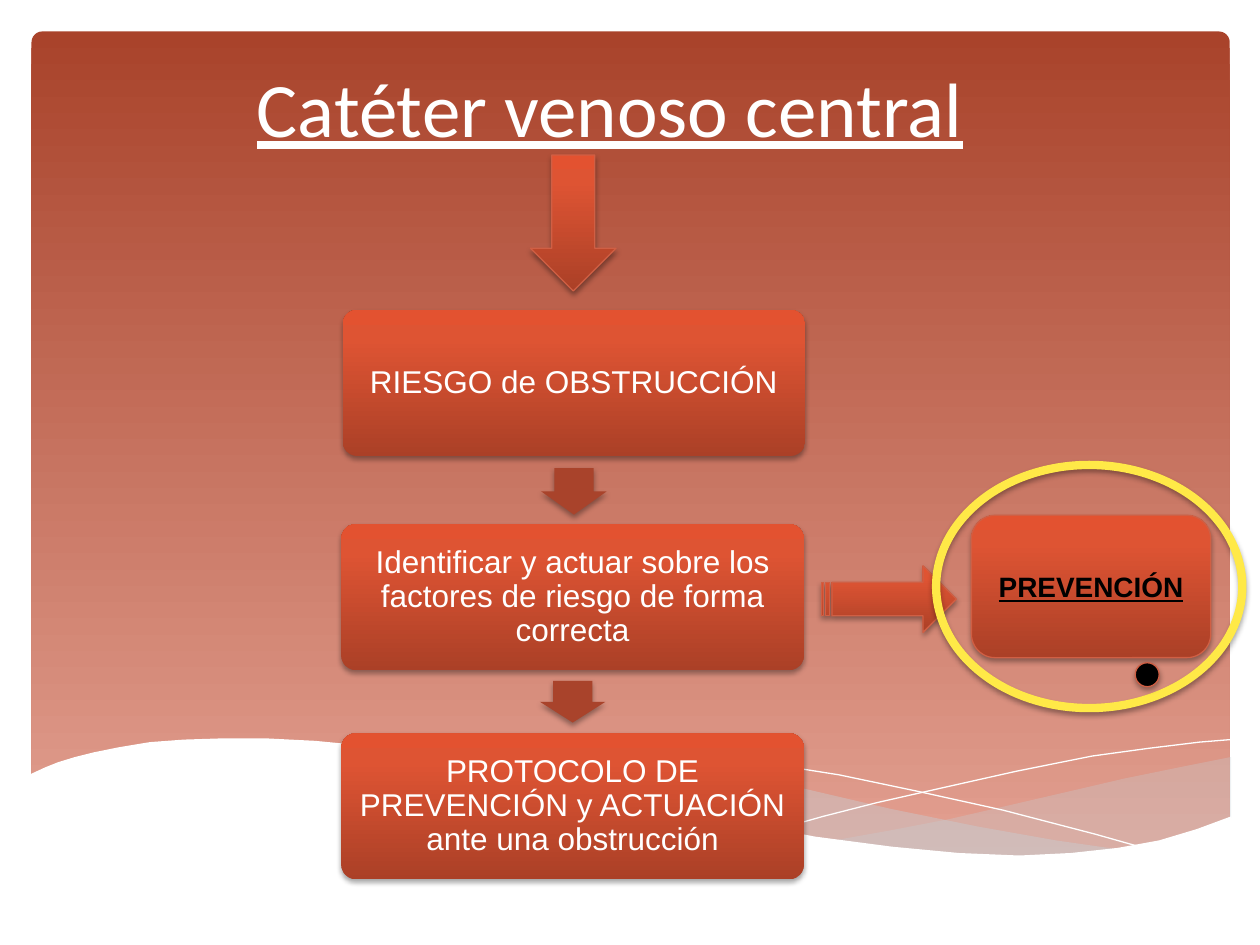
from pptx import Presentation
from pptx.dml.color import RGBColor
from pptx.enum.shapes import MSO_SHAPE as Kind
from pptx.enum.text import MSO_ANCHOR as Anchor, PP_ALIGN as Align
from pptx.oxml.ns import qn
from pptx.util import Pt
from lxml.etree import SubElement as Sub

PX = 9144
WHITE = RGBColor(0xFF, 0xFF, 0xFF)
BLACK = RGBColor(0x00, 0x00, 0x00)
RUST = RGBColor(0xA9, 0x43, 0x2B)
PINK = RGBColor(0xE3, 0xA1, 0x92)
GREY = RGBColor(0xC5, 0xD1, 0xD7)
EDGE = RGBColor(0xD0, 0x5F, 0x44)
GOLD = RGBColor(0xFF, 0xE9, 0x47)
DARK = RGBColor(0xAB, 0x40, 0x27)
WARM = RGBColor(0xDE, 0x54, 0x33)
LIT = RGBColor(0xE3, 0x52, 0x30)
GLOW = [(0, DARK), (80, WARM), (100, LIT)]
FADE = [(0, RUST), (100, PINK)]

FOLD = [(976, 601), (936, 609), (892, 618), (862, 625), (806, 638), (754, 650),
        (707, 659), (662, 667), (706, 673), (745, 677), (782, 679), (815, 680),
        (855, 678), (890, 674), (922, 667), (951, 659), (977, 649), (977, 601)]
BAND = [(894, 675), (838, 667), (776, 656), (707, 642), (630, 624), (584, 613),
        (542, 605), (502, 598), (465, 593), (420, 589), (380, 588), (345, 588),
        (314, 590), (287, 593), (323, 598), (363, 605), (405, 613), (450, 624),
        (530, 642), (602, 657), (651, 666), (696, 672), (737, 677), (774, 679),
        (808, 680), (849, 679), (877, 677)]
FALL = [(310, 597), (329, 594), (353, 591), (388, 589), (433, 589), (469, 590),
        (511, 594), (557, 598), (609, 606), (666, 615), (728, 628), (796, 643),
        (869, 662), (908, 673)]
RISE = [(614, 659), (653, 648), (696, 637), (749, 625), (807, 612), (867, 600),
        (911, 594), (952, 589), (976, 587)]
WAVE = [(977, 648), (950, 658), (920, 667), (887, 673), (850, 677), (809, 679),
        (761, 677), (708, 672), (647, 664), (579, 651), (503, 635), (447, 622),
        (391, 609), (339, 599), (292, 592), (250, 588), (211, 586), (177, 586),
        (146, 587), (119, 589), (95, 593), (75, 597), (59, 601), (46, 605),
        (36, 609), (23, 615), (23, 731), (977, 731)]


class Deck:
    """Holds the slide and the style of its shapes."""

    def __init__(self):
        self.prs = Presentation()
        self.prs.slide_width, self.prs.slide_height = 1000 * PX, 750 * PX
        self.slide = self.prs.slides.add_slide(self.prs.slide_layouts[5])
        self.shapes = self.slide.shapes

    def paint(self, item, fill=None, edge=None, width=0.75, turn=90):
        item.shadow.inherit = False
        if fill is None:
            item.fill.background()
        elif isinstance(fill, list):
            item.fill.gradient()
            item.fill.gradient_angle = turn
            stops = item._element.spPr.find(qn("a:gradFill")).find(qn("a:gsLst"))
            for old in list(stops):
                stops.remove(old)
            for pos, tone in fill:
                stop = Sub(stops, qn("a:gs"), pos=str(pos * 1000))
                Sub(stop, qn("a:srgbClr"), val=str(tone))
        else:
            item.fill.solid()
            item.fill.fore_color.rgb = fill
        if edge is None:
            item.line.fill.background()
        else:
            item.line.color.rgb = edge
            item.line.width = Pt(width)

    def shade(self, item):
        effect = item._element.spPr.find(qn("a:effectLst"))
        drop = Sub(effect, qn("a:outerShdw"), blurRad=str(int(Pt(3.1))),
                   dist=str(int(Pt(1.8))), dir="5400000", rotWithShape="0")
        tone = Sub(drop, qn("a:srgbClr"), val=str(BLACK))
        Sub(tone, qn("a:alpha"), val="35000")

    def shape(self, kind, box, fill=GLOW, edge=None, width=0.75, adj=(),
              turn=90, spin=0, shadow=True):
        item = self.shapes.add_shape(kind, *(n * PX for n in box))
        for i, value in enumerate(adj):
            item.adjustments[i] = value
        item.rotation = spin
        self.paint(item, fill, edge, width, turn)
        if shadow:
            self.shade(item)
        return item

    def curve(self, dots, fill=None, edge=None, alpha=100):
        pen = self.shapes.build_freeform(*dots[0], scale=PX)
        pen.add_line_segments(dots[1:], close=fill is not None)
        item = pen.convert_to_shape()
        self.paint(item, fill, edge, 0)
        if alpha < 100:
            tone = item._element.spPr.find(qn("a:solidFill"))[0]
            Sub(tone, qn("a:alpha"), val=str(alpha * 1000))

    def label(self, item, text, size, tone=WHITE, face="Arial", bold=False,
              under=False):
        frame = item.text_frame
        frame.text = text
        frame.word_wrap = True
        frame.vertical_anchor = Anchor.MIDDLE
        para = frame.paragraphs[0]
        para.alignment = Align.CENTER
        font = para.runs[0].font
        font.size, font.name, font.bold = Pt(size), face, bold
        font.underline, font.color.rgb = under, tone
        return frame

    def title(self, text, box):
        item = self.shapes.title
        item.left, item.top, item.width, item.height = (n * PX for n in box)
        self.label(item, text, 44, face="Calibri", under=True)
        self.shapes._spTree.append(item._element)

    def step(self, left, top, text):
        item = self.shape(Kind.ROUNDED_RECTANGLE, (left, top, 367, 116), adj=[0.1])
        frame = self.label(item, text, 18)
        frame.margin_left = frame.margin_right = 7 * PX
        frame.margin_top = frame.margin_bottom = 7 * PX
        frame.paragraphs[0].line_spacing = 0.9


def main():
    deck = Deck()
    deck.shape(Kind.ROUNDED_RECTANGLE, (25, 25, 951, 660), FADE, adj=[0.013],
               turn=270, shadow=False)
    deck.curve(FOLD, GREY, alpha=29)
    deck.curve(BAND, GREY, alpha=40)
    deck.curve(FALL, edge=WHITE)
    deck.curve(RISE, edge=WHITE)
    deck.curve(WAVE, WHITE)

    for left, top, text in [
        (272, 246, "RIESGO de OBSTRUCCIÓN"),
        (271, 416, "Identificar y actuar sobre los factores de riesgo de forma correcta"),
        (271, 582, "PROTOCOLO DE PREVENCIÓN y ACTUACIÓN ante una obstrucción"),
    ]:
        deck.step(left, top, text)
    for box in [(437, 364, 37, 52), (438, 531, 33, 52)]:
        deck.shape(Kind.RIGHT_ARROW, box, RUST, adj=[0.6, 0.5], spin=90)

    deck.title("Catéter venoso central", (34, 16, 900, 137))
    deck.shape(Kind.DOWN_ARROW, (421, 123, 68, 108), edge=EDGE)
    deck.shape(Kind.STRIPED_RIGHT_ARROW, (652, 449, 107, 53), edge=EDGE)
    goal = deck.shape(Kind.ROUNDED_RECTANGLE, (771, 409, 190, 113), edge=EDGE)
    deck.label(goal, "PREVENCIÓN", 16, BLACK, bold=True, under=True)
    deck.shape(Kind.OVAL, (743, 369, 243, 193), None, GOLD, 4.75)
    deck.shape(Kind.OVAL, (901, 526, 19, 19), BLACK, EDGE)
    deck.prs.save("out.pptx")


if __name__ == "__main__":
    main()
